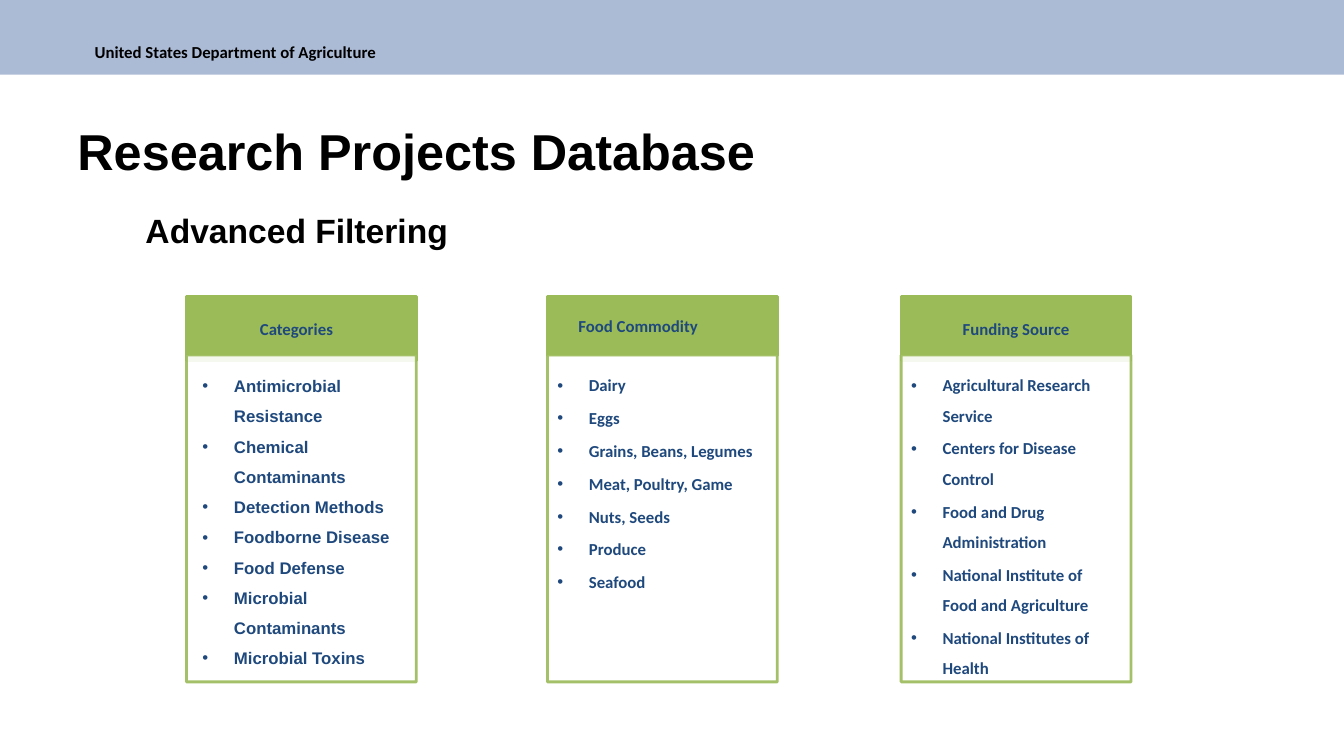
from pptx import Presentation
from pptx.dml.color import RGBColor as Rgb
from pptx.enum.shapes import MSO_SHAPE as Shape
from pptx.enum.text import MSO_ANCHOR as Anchor, MSO_AUTO_SIZE as Auto, PP_ALIGN as Align
from pptx.oxml.ns import qn
from pptx.util import Pt
from lxml.etree import SubElement as Sub

HUES = {"band": "ACBBD5", "green": "9BBB59", "white": "FFFFFF", "navy": "1F497D", "black": "000000"}

# left edge, head text, head height, head right inset, font, list items
COLS = [
    (133.2, "Categories", 46, 16.5, "Arial",
     ["Antimicrobial Resistance", "Chemical Contaminants", "Detection Methods",
      "Foodborne Disease", "Food Defense", "Microbial Contaminants", "Microbial Toxins"]),
    (391, "Food Commodity", 42.2, 44, "Calibri",
     ["Dairy", "Eggs", "Grains, Beans, Legumes", "Meat, Poultry, Game",
      "Nuts, Seeds", "Produce", "Seafood"]),
    (643.7, "Funding Source", 46, 9.4, "Calibri",
     ["Agricultural Research Service", "Centers for Disease Control",
      "Food and Drug Administration", "National Institute of Food and Agriculture",
      "National Institutes of Health"]),
]
WIDE, TOP, BODY, TALL = 164.2, 211.7, 253.6, 233.5


def add_box(x, y, w, h, fill, line=None, alpha=None):
    """Add a flat rectangle; alpha is the opacity in percent."""
    box = slide.shapes.add_shape(Shape.RECTANGLE, Pt(x), Pt(y), Pt(w), Pt(h))
    box.shadow.inherit = False
    box.fill.solid()
    box.fill.fore_color.rgb = Rgb.from_string(HUES[fill])
    if line:
        box.line.color.rgb = Rgb.from_string(HUES[line])
        box.line.width = Pt(2)
    else:
        box.line.fill.background()
    if alpha:
        for tone in box._element.spPr.iter(qn("a:srgbClr")):
            Sub(tone, qn("a:alpha"), val=str(alpha * 1000))
    return box


def add_text(frame, lines, size, font, hue, align=Align.LEFT, gap=None, pads=(7.2, 3.6, 7.2, 3.6)):
    """Fill a frame with bold lines; a gap (space after) makes them bullets."""
    frame.word_wrap = True
    frame.margin_left, frame.margin_top, frame.margin_right, frame.margin_bottom = map(Pt, pads)
    for i, line in enumerate(lines):
        para = frame.paragraphs[0] if i == 0 else frame.add_paragraph()
        para.alignment = align
        if gap is not None:
            para.line_spacing = 1.5
            para.space_after = Pt(gap)
            props = para._p.get_or_add_pPr()
            props.set("marL", str(Pt(22.5)))
            props.set("indent", str(Pt(-22.5)))
            Sub(props, qn("a:buFont"), typeface="Arial")
            Sub(props, qn("a:buChar"), char="•")
        run = para.add_run()
        run.text = line
        run.font.size = Pt(size)
        run.font.name = font
        run.font.bold = True
        run.font.color.rgb = Rgb.from_string(HUES[hue])


deck = Presentation()
deck.slide_width, deck.slide_height = Pt(960), Pt(540)
slide = deck.slides.add_slide(deck.slide_layouts[6])

add_box(-8.6, -10, 977, 63.4, "band")

TITLES = [
    (60.5, 26.6, 501.8, 21.6, "United States Department of Agriculture", 12, "Calibri", Align.LEFT),
    (48.2, 82, 501.8, 50.4, "Research Projects Database", 36, "Arial", Align.LEFT),
    (-119.5, 146.2, 669.6, 36, "Advanced Filtering ", 24, "Arial", Align.CENTER),
]
for x, y, w, h, words, size, font, align in TITLES:
    label = slide.shapes.add_textbox(Pt(x), Pt(y), Pt(w), Pt(h))
    add_text(label.text_frame, [words], size, font, "black", align)
    label.text_frame.auto_size = Auto.SHAPE_TO_FIT_TEXT

for x, name, high, right, font, items in COLS:
    head = add_box(x, TOP, WIDE, high, "green", "green")
    head.text_frame.vertical_anchor = Anchor.MIDDLE
    add_text(head.text_frame, [name], 12, "Calibri", "navy", Align.CENTER,
             pads=(9.4, 5.8, right, 5.8))
    panel = add_box(x, BODY, WIDE, TALL, "white", "green", 90)
    if name == "Categories":
        panel = slide.shapes.add_textbox(Pt(x + 4.3), Pt(257.8), Pt(WIDE), Pt(225.4))
        add_text(panel.text_frame, items, 12, font, "navy", gap=0)
    else:
        panel.text_frame.vertical_anchor = Anchor.TOP
        add_text(panel.text_frame, items, 12, font, "navy", gap=1.8,
                 pads=(7.2, 7.2, 9.4, 10.8))

deck.save("out.pptx")
